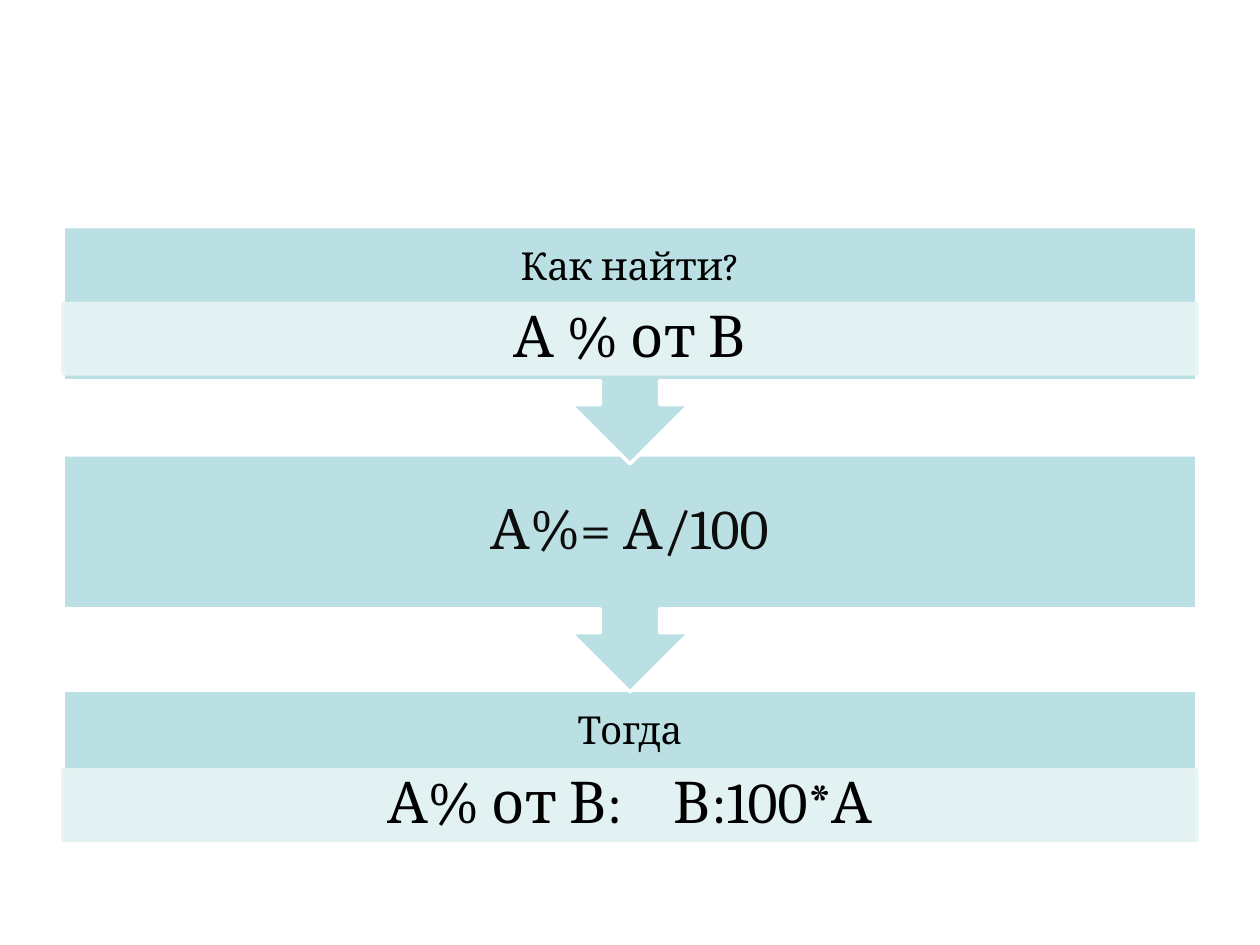
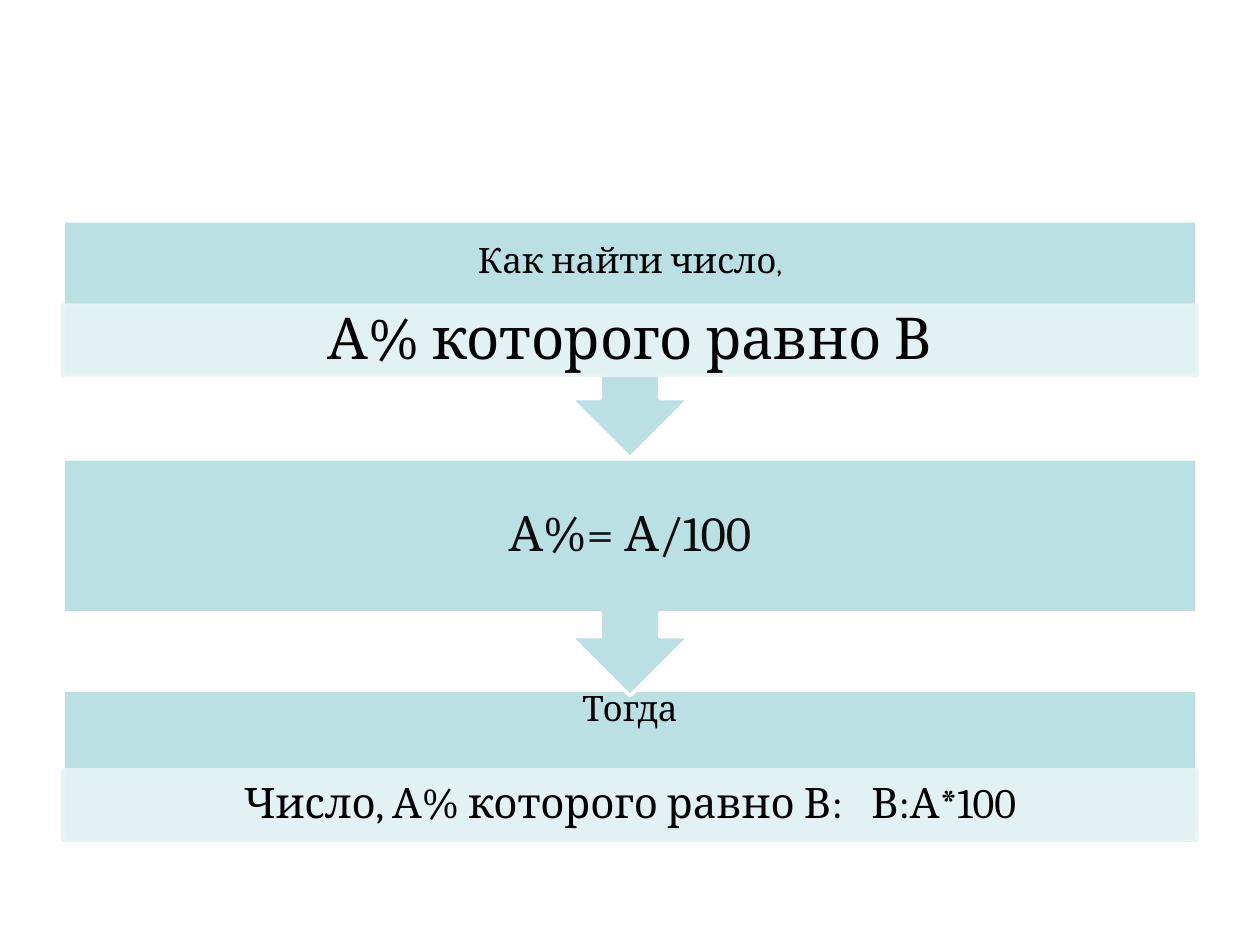
"""Builds two slides of percentage rules as chains of arrow callouts."""
from lxml.etree import SubElement
from pptx import Presentation
from pptx.dml.color import RGBColor
from pptx.enum.shapes import MSO_SHAPE
from pptx.enum.text import MSO_ANCHOR, PP_ALIGN
from pptx.oxml.ns import qn
from pptx.util import Cm, Pt

TEAL = RGBColor(0xBB, 0xE0, 0xE3)
PALE = RGBColor(0xE7, 0xF3, 0xF4)
WHITE = RGBColor(0xFF, 0xFF, 0xFF)
BLACK = RGBColor(0x00, 0x00, 0x00)
DARK = RGBColor(0x0D, 0x0D, 0x0D)

FRAME = {"word_wrap": True, "vertical_anchor": MSO_ANCHOR.MIDDLE,
         "margin_left": 0, "margin_right": 0, "margin_top": 0, "margin_bottom": 0}
LINES = {"alignment": PP_ALIGN.CENTER, "line_spacing": 0.9}


def apply(item, values):
    for name, value in values.items():
        setattr(item, name, value)


class Deck:
    """Holds the style and the current slide."""

    left, width = 1.27, 22.86
    head, strip, body, call = 1.68, 1.42, 3.1, 4.78
    font = "Cambria"

    def __init__(self):
        self.show = Presentation()
        apply(self.show, {"slide_width": Cm(25.4), "slide_height": Cm(19.05)})

    def slide(self):
        self.page = self.show.slides.add_slide(self.show.slide_layouts[6])

    def block(self, kind, top, high, fill=TEAL, edge=WHITE):
        shape = self.page.shapes.add_shape(
            kind, Cm(self.left), Cm(top), Cm(self.width), Cm(high))
        shape.shadow.inherit = False
        shape.fill.solid()
        shape.fill.fore_color.rgb = fill
        shape.line.color.rgb = edge
        shape.line.width = Pt(2)
        return shape

    def callout(self, top):
        self.block(MSO_SHAPE.UP_ARROW_CALLOUT, top, self.call).rotation = 180

    def fill_in(self, shape, runs, color):
        frame = shape.text_frame
        apply(frame, FRAME)
        line = frame.paragraphs[0]
        apply(line, LINES)
        for text, size, gap in runs:
            run = line.add_run()
            run.text = text
            apply(run.font, {"name": self.font, "size": Pt(size)})
            run.font.color.rgb = color
            if gap:
                run.font._element.set("spc", str(gap * 100))

    def label(self, top, high, runs, color=BLACK):
        box = self.page.shapes.add_textbox(
            Cm(self.left), Cm(top), Cm(self.width), Cm(high))
        self.fill_in(box, runs, color)

    def band(self, top, runs):
        shape = self.block(MSO_SHAPE.RECTANGLE, top, self.strip, PALE, PALE)
        for tint in shape._element.spPr.iter(qn("a:srgbClr")):
            SubElement(tint, qn("a:alpha"), val="90000")
        self.fill_in(shape, runs, BLACK)

    def chain(self, ask, rule, then):
        self.slide()
        self.block(MSO_SHAPE.RECTANGLE, 13.92, self.body)
        self.label(13.92, then["high"], then["head"])
        self.band(15.52, then["band"])
        self.callout(rule["top"])
        self.label(rule["top"], self.body, rule["text"], DARK)
        self.callout(ask["top"])
        self.label(ask["top"], self.head, ask["head"])
        self.band(ask["low"], ask["band"])


def main():
    deck = Deck()
    deck.chain(
        {"top": 4.57, "low": 6.12, "head": [("Как найти?", 22, 0)],
         "band": [("А % от В", 33, 0)]},
        {"top": 9.17, "text": [("А%= А/100", 32, 0)]},
        {"high": deck.head, "head": [("Тогда", 22, 0)],
         "band": [("А% от В:", 33, 0), (" ", 33, 22), ("В:100*А", 33, 0)]})
    deck.chain(
        {"top": 4.45, "low": 6.15,
         "head": [("Как найти число", 20, 0), (",", 15, 0)],
         "band": [("А% которого равно В", 33, 0)]},
        {"top": 9.25, "text": [("А%= А/100", 28, 0)]},
        {"high": 0.8, "head": [("Тогда", 20, 0)],
         "band": [("Число, А% которого равно В:", 24, 0), (" ", 24, 11),
                  ("В:А*100", 24, 0)]})
    deck.show.save("out.pptx")


if __name__ == "__main__":
    main()
